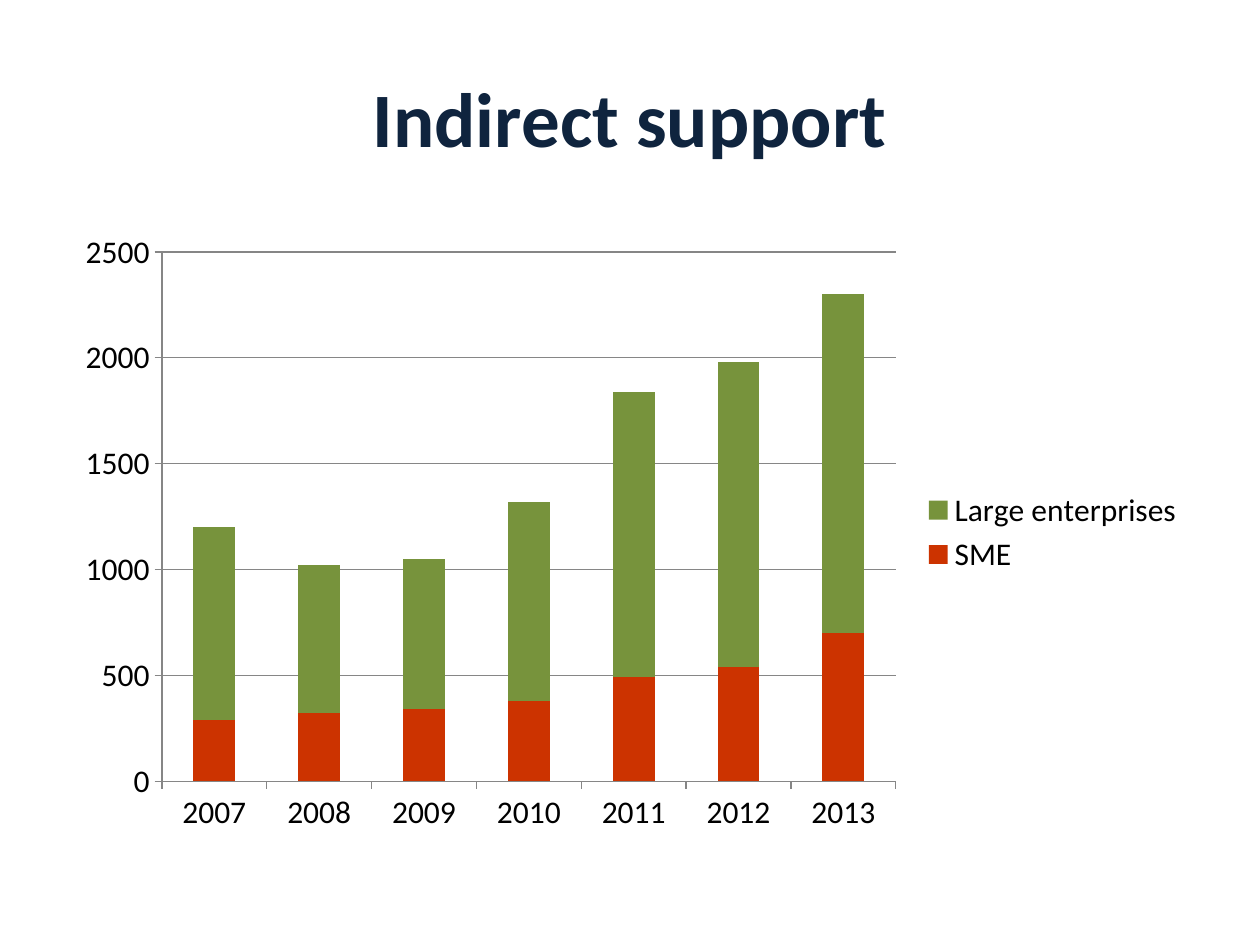
from dataclasses import dataclass

from pptx import Presentation
from pptx.chart.data import CategoryChartData
from pptx.dml.color import RGBColor
from pptx.enum.chart import XL_CHART_TYPE, XL_LEGEND_POSITION, XL_TICK_MARK
from pptx.enum.text import MSO_ANCHOR, PP_ALIGN
from pptx.util import Inches, Pt

STACKED = XL_CHART_TYPE.COLUMN_STACKED
RIGHT = XL_LEGEND_POSITION.RIGHT
OUTSIDE = XL_TICK_MARK.OUTSIDE
NO_TICK = XL_TICK_MARK.NONE
MIDDLE = MSO_ANCHOR.MIDDLE
CENTER = PP_ALIGN.CENTER

COLORS = {
    "title": "0F243E",
    "text": "000000",
    "sme": "CC3300",
    "large": "77933C",
    "line": "868686",
}
FONT = "Calibri"


@dataclass
class Group:
    name: str
    color: str
    sums: tuple[int, ...]


YEARS = [str(year) for year in range(2007, 2014)]
GROUPS = [
    Group("SME", "sme", (290, 320, 340, 380, 490, 540, 700)),
    Group("Large enterprises", "large", (910, 700, 710, 940, 1350, 1440, 1600)),
]


def apply(item, values: dict) -> None:
    for name, value in values.items():
        setattr(item, name, value)


def style(font, size: int, color: str, bold: bool) -> None:
    apply(font, {"name": FONT, "size": Pt(size), "bold": bold})
    font.color.rgb = RGBColor.from_string(COLORS[color])


def rule(line) -> None:
    line.color.rgb = RGBColor.from_string(COLORS["line"])
    line.width = Pt(0.75)


def add_title(slide, text: str) -> None:
    box = slide.shapes.add_textbox(Inches(0.5), Inches(0.3), Inches(9), Inches(1.25))
    frame = box.text_frame
    apply(frame, {"word_wrap": True, "vertical_anchor": MIDDLE})
    para = frame.paragraphs[0]
    para.alignment = CENTER
    run = para.add_run()
    run.text = text
    style(run.font, 44, "title", True)


def add_bars(slide, groups: list[Group]) -> None:
    data = CategoryChartData()
    data.categories = YEARS
    for group in groups:
        data.add_series(group.name, group.sums)
    chart = slide.shapes.add_chart(
        STACKED, Inches(0.5), Inches(1.75), Inches(9), Inches(4.95), data
    ).chart
    apply(chart, {"has_title": False, "has_legend": True})
    style(chart.font, 18, "text", False)
    apply(chart.legend, {"position": RIGHT, "include_in_layout": False})

    plot = chart.plots[0]
    apply(plot, {"gap_width": 150, "overlap": 100, "vary_by_categories": False})
    for group, bars in zip(groups, plot.series):
        bars.format.fill.solid()
        bars.format.fill.fore_color.rgb = RGBColor.from_string(COLORS[group.color])

    for axis in (chart.category_axis, chart.value_axis):
        apply(axis, {"major_tick_mark": OUTSIDE, "minor_tick_mark": NO_TICK})
        rule(axis.format.line)
    scale = {"minimum_scale": 0, "maximum_scale": 2500, "major_unit": 500}
    apply(chart.value_axis, {**scale, "has_major_gridlines": True})
    rule(chart.value_axis.major_gridlines.format.line)


def main() -> None:
    deck = Presentation()
    apply(deck, {"slide_width": Inches(10), "slide_height": Inches(7.5)})
    slide = deck.slides.add_slide(deck.slide_layouts[6])
    add_title(slide, "Indirect support")
    add_bars(slide, GROUPS)
    deck.save("out.pptx")


if __name__ == "__main__":
    main()
